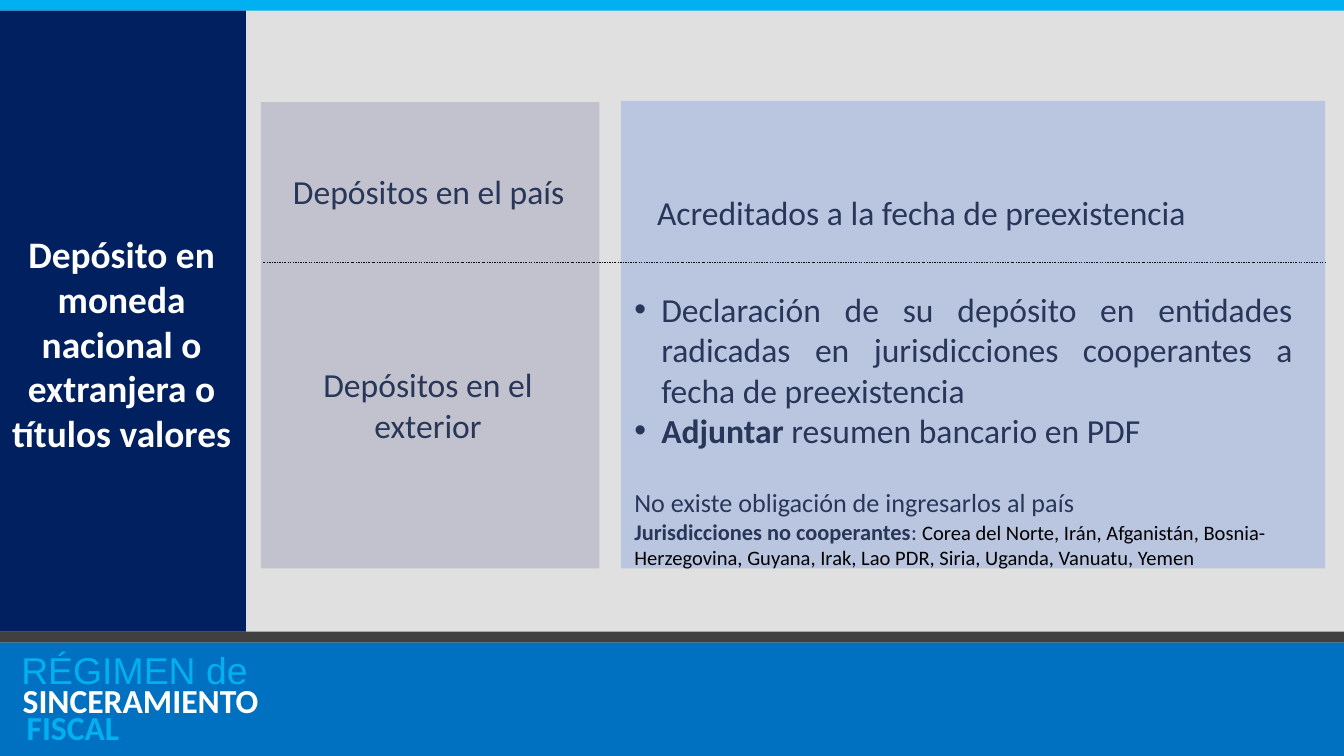
from lxml.etree import SubElement
from pptx import Presentation
from pptx.dml.color import RGBColor
from pptx.enum.dml import MSO_LINE
from pptx.enum.shapes import MSO_CONNECTOR, MSO_SHAPE
from pptx.enum.text import MSO_ANCHOR, MSO_AUTO_SIZE, PP_ALIGN
from pptx.oxml.ns import qn
from pptx.util import Inches, Pt

INK = "283659"
SKY = "00B0F0"
WHITE = "FFFFFF"
BACKDROP = "D9D9D9"


def color(hex_value):
    return RGBColor.from_string(hex_value)


def add_run(paragraph, text, size, hex_value, bold=False, typeface="Calibri"):
    run = paragraph.add_run()
    run.text = text
    run.font.name = typeface
    run.font.size = Pt(size)
    run.font.bold = bold
    run.font.color.rgb = color(hex_value)


prs = Presentation()
prs.slide_width = Inches(10)
prs.slide_height = Inches(10) * 9 // 16
slide = prs.slides.add_slide(prs.slide_layouts[1])
shapes = slide.shapes

# Backdrop, footer, top band and content panels
bands = [
    (-0.02, 0, 10.02, 5.63, BACKDROP),
    (-0.03, 4.78, 10.03, 0.85, "0070C0"),
    (-0.02, 4.7, 10.02, 0.08, "404040"),
    (-0.02, 0, 10.02, 0.08, SKY),
    (4.62, 0.75, 5.24, 3.48, "BAC5DF"),
    (1.94, 0.76, 2.52, 3.47, "C1C2CD"),
    (-0.02, 0.08, 1.85, 4.62, "002060"),
]
for left, top, width, height, fill in bands:
    band = shapes.add_shape(MSO_SHAPE.RECTANGLE, Inches(left), Inches(top),
                            Inches(width), Inches(height))
    band.shadow.inherit = False
    band.fill.solid()
    band.fill.fore_color.rgb = color(fill)
    band.line.fill.background()
    if fill == BACKDROP:
        tint = band.element.spPr.find(qn("a:solidFill")).find(qn("a:srgbClr"))
        SubElement(tint, qn("a:alpha"), val="80000")

# Footer wording and row labels
LEFT, CENTER = PP_ALIGN.LEFT, PP_ALIGN.CENTER
labels = [
    (0.06, 4.77, 4.45, 0.44, LEFT, "RÉGIMEN de", 20, SKY, False, "Arial"),
    (0.07, 5.01, 4.35, 0.4, LEFT, "SINCERAMIENTO", 18, WHITE, True),
    (0.1, 5.21, 1.79, 0.4, LEFT, "FISCAL", 18, SKY, True),
    (1.95, 1.22, 2.48, 0.4, CENTER, "Depósitos en el país", 18, INK),
    (4.79, 1.38, 5.38, 0.4, LEFT, "Acreditados a la fecha de preexistencia", 18, INK),
    (1.91, 2.66, 2.55, 0.71, CENTER, "Depósitos en el exterior", 18, INK),
]
for left, top, width, height, align, *wording in labels:
    label = shapes.add_textbox(Inches(left), Inches(top), Inches(width), Inches(height))
    label.text_frame.word_wrap = True
    paragraph = label.text_frame.paragraphs[0]
    paragraph.alignment = align
    add_run(paragraph, *wording)

# Title and requirements, brought in front of the panels
title = shapes.title
requirements = slide.placeholders[1]
for holder, (left, top, width, height) in [
    (title, (-0.06, 1.67, 1.93, 1.78)),
    (requirements, (4.62, 2.1, 5.1, 2.47)),
]:
    holder.left, holder.top = Inches(left), Inches(top)
    holder.width, holder.height = Inches(width), Inches(height)
    holder.text_frame.word_wrap = True
    holder.text_frame.auto_size = MSO_AUTO_SIZE.NONE
    holder.text_frame.vertical_anchor = MSO_ANCHOR.TOP
    shapes.element.append(holder.element)

heading = title.text_frame.paragraphs[0]
heading.alignment = CENTER
add_run(heading, "Depósito en moneda nacional o extranjera o títulos valores", 20, WHITE, True)

# Each entry: bulleted, alignment, space before, runs
entries = [
    (True, PP_ALIGN.JUSTIFY, 0, [
        ("Declaración de su depósito en entidades radicadas en jurisdicciones "
         "cooperantes a fecha de preexistencia", 18, INK)]),
    (True, LEFT, 0, [("Adjuntar", 18, INK, True), (" resumen bancario en PDF", 18, INK)]),
    (False, LEFT, 19.5, [("No existe obligación de ingresarlos al país", 14, INK)]),
    (False, LEFT, 0, [
        ("Jurisdicciones no cooperantes", 12, INK, True),
        (": ", 12, INK),
        ("Corea del Norte, Irán, Afganistán, Bosnia-Herzegovina, Guyana, Irak, "
         "Lao PDR, Siria, Uganda, Vanuatu, Yemen", 11, "000000")]),
]
frame = requirements.text_frame
for index, (bulleted, align, gap, runs) in enumerate(entries):
    paragraph = frame.add_paragraph() if index else frame.paragraphs[0]
    paragraph.alignment = align
    paragraph.space_before = Pt(gap)
    indent = Inches(0.2) if bulleted else 0
    properties = paragraph._p.get_or_add_pPr()
    properties.set("marL", str(indent))
    properties.set("indent", str(-indent))
    if bulleted:
        SubElement(properties, qn("a:buFont"), typeface="Arial")
        SubElement(properties, qn("a:buChar"), char="•")
    else:
        SubElement(properties, qn("a:buNone"))
    for run in runs:
        add_run(paragraph, *run)

divider = shapes.add_connector(MSO_CONNECTOR.STRAIGHT, Inches(1.96), Inches(1.95),
                               Inches(9.87), Inches(1.95))
divider.line.color.rgb = color("0D0D0D")
divider.line.width = Pt(0.25)
divider.line.dash_style = MSO_LINE.DASH_DOT
SubElement(divider.element.spPr, qn("a:effectLst"))

prs.save("out.pptx")
